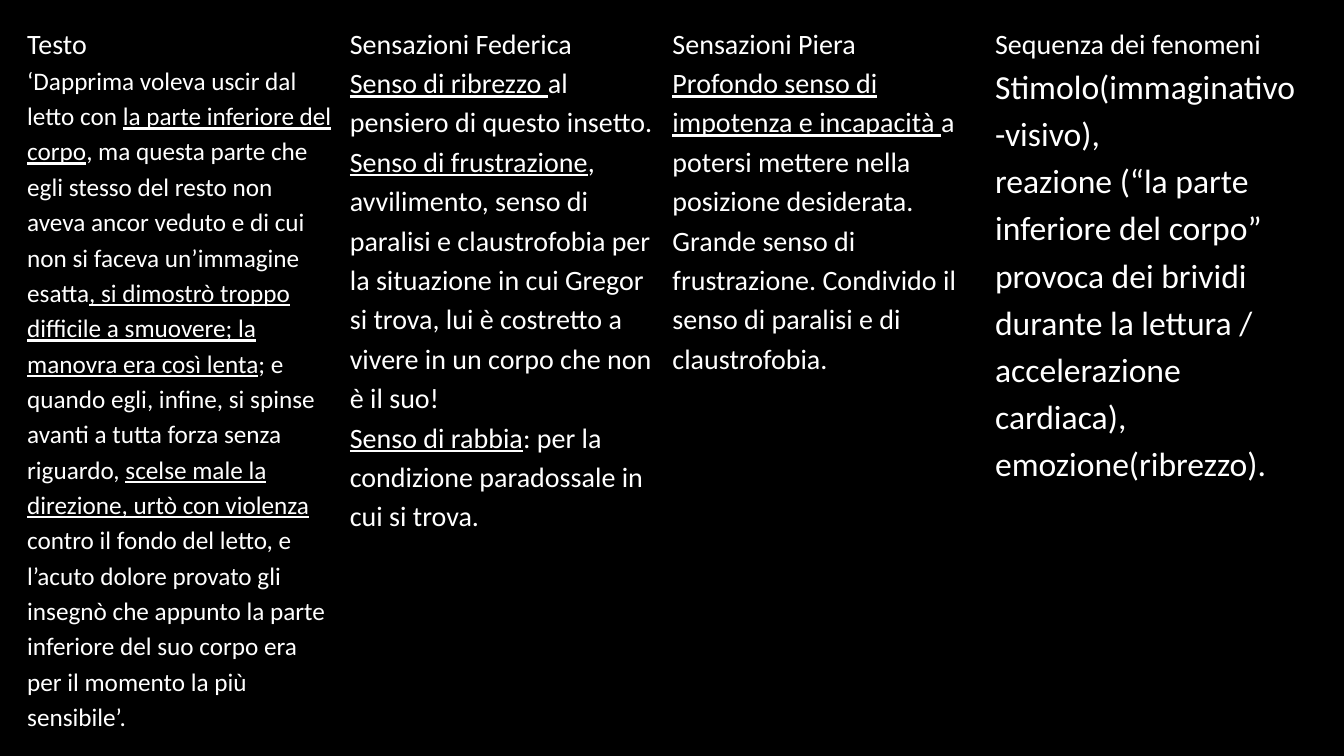
from dataclasses import dataclass

from lxml import etree
from pptx import Presentation
from pptx import util as u
from pptx.dml import color
from pptx.enum import text
from pptx.oxml import ns

COLORS = {"background": "000000", "border": "000000", "text": "FFFFFF"}
FONT_NAME = "Calibri"
HEADING_SIZE = 20
COLUMN_WIDTH = 3.2
ROW_HEIGHTS = (0.38, 6.83)
CELL_FORMAT = {
    "margin_left": u.Inches(0.07),
    "margin_right": u.Inches(0.07),
    "margin_top": 0,
    "margin_bottom": 0,
    "vertical_anchor": text.MSO_ANCHOR.TOP,
}


@dataclass(frozen=True)
class Span:
    words: str
    underline: bool = False


@dataclass(frozen=True)
class Column:
    heading: str
    size: int
    paragraphs: list[list[Span]]


COLUMNS = [
    Column("Testo", 18, [[
        Span("‘Dapprima voleva uscir dal letto con "),
        Span("la parte inferiore del corpo", True),
        Span(", ma questa parte che egli stesso del resto non aveva ancor veduto "
             "e di cui non si faceva un’immagine esatta"),
        Span(", si dimostrò troppo difficile a smuovere; la manovra era così lenta", True),
        Span("; e quando egli, infine, si spinse avanti a tutta forza senza riguardo, "),
        Span("scelse male la direzione, urtò con violenza ", True),
        Span("contro il fondo del letto, e l’acuto dolore provato gli insegnò che "
             "appunto la parte inferiore del suo corpo era per il momento la più "
             "sensibile’."),
    ]]),
    Column("Sensazioni Federica", 20, [
        [
            Span("Senso di ribrezzo ", True),
            Span("al pensiero di questo insetto. "),
            Span("Senso di frustrazione", True),
            Span(", avvilimento, senso di paralisi e claustrofobia per la situazione "
                 "in cui Gregor si trova, lui è costretto a vivere in un corpo che "
                 "non è il suo!"),
        ],
        [
            Span("Senso di rabbia", True),
            Span(": per la condizione paradossale in cui si trova."),
        ],
    ]),
    Column("Sensazioni Piera", 20, [
        [
            Span("Profondo senso di impotenza e incapacità ", True),
            Span("a potersi mettere nella posizione desiderata."),
        ],
        [Span("Grande senso di frustrazione. Condivido il senso di paralisi e di "
              "claustrofobia.")],
    ]),
    Column("Sequenza dei fenomeni", 24, [
        [Span("Stimolo(immaginativo-visivo),")],
        [Span("reazione (“la parte inferiore del corpo” provoca dei brividi durante "
              "la lettura / accelerazione cardiaca), emozione(ribrezzo).")],
    ]),
]


def add_borders(cell) -> None:
    properties = cell._tc.get_or_add_tcPr()
    for position, side in enumerate(("lnL", "lnR", "lnT", "lnB")):
        line = etree.Element(ns.qn(f"a:{side}"), w=str(u.Pt(1)))
        fill = etree.SubElement(line, ns.qn("a:solidFill"))
        etree.SubElement(fill, ns.qn("a:srgbClr"), val=COLORS["border"])
        properties.insert(position, line)


def fill_cell(cell, paragraphs: list[list[Span]], size: int) -> None:
    for name, value in CELL_FORMAT.items():
        setattr(cell, name, value)
    cell.fill.background()
    add_borders(cell)
    frame = cell.text_frame
    for index, spans in enumerate(paragraphs):
        para = frame.add_paragraph() if index else frame.paragraphs[0]
        para.line_spacing = 1.15
        for span in spans:
            run = para.add_run()
            run.text = span.words
            font_format = {"name": FONT_NAME, "size": u.Pt(size),
                           "bold": False, "underline": span.underline}
            for name, value in font_format.items():
                setattr(run.font, name, value)
            run.font.color.rgb = color.RGBColor.from_string(COLORS["text"])


def add_comparison_table(page) -> None:
    table = page.shapes.add_table(
        len(ROW_HEIGHTS), len(COLUMNS), u.Inches(0.2), u.Inches(0.22),
        u.Inches(COLUMN_WIDTH * len(COLUMNS)), u.Inches(sum(ROW_HEIGHTS))).table
    table.first_row = table.horz_banding = False
    for row, height in zip(table.rows, ROW_HEIGHTS):
        row.height = u.Inches(height)
    for index, column in enumerate(COLUMNS):
        table.columns[index].width = u.Inches(COLUMN_WIDTH)
        fill_cell(table.cell(0, index), [[Span(column.heading)]], HEADING_SIZE)
        fill_cell(table.cell(1, index), column.paragraphs, column.size)


def main() -> None:
    # Slide and background
    deck = Presentation()
    deck.slide_width, deck.slide_height = u.Inches(13.33), u.Inches(7.5)
    page = deck.slides.add_slide(deck.slide_layouts[6])
    page.background.fill.solid()
    page.background.fill.fore_color.rgb = color.RGBColor.from_string(COLORS["background"])

    # Text beside the reactions it provokes
    add_comparison_table(page)
    deck.save("out.pptx")


if __name__ == "__main__":
    main()
